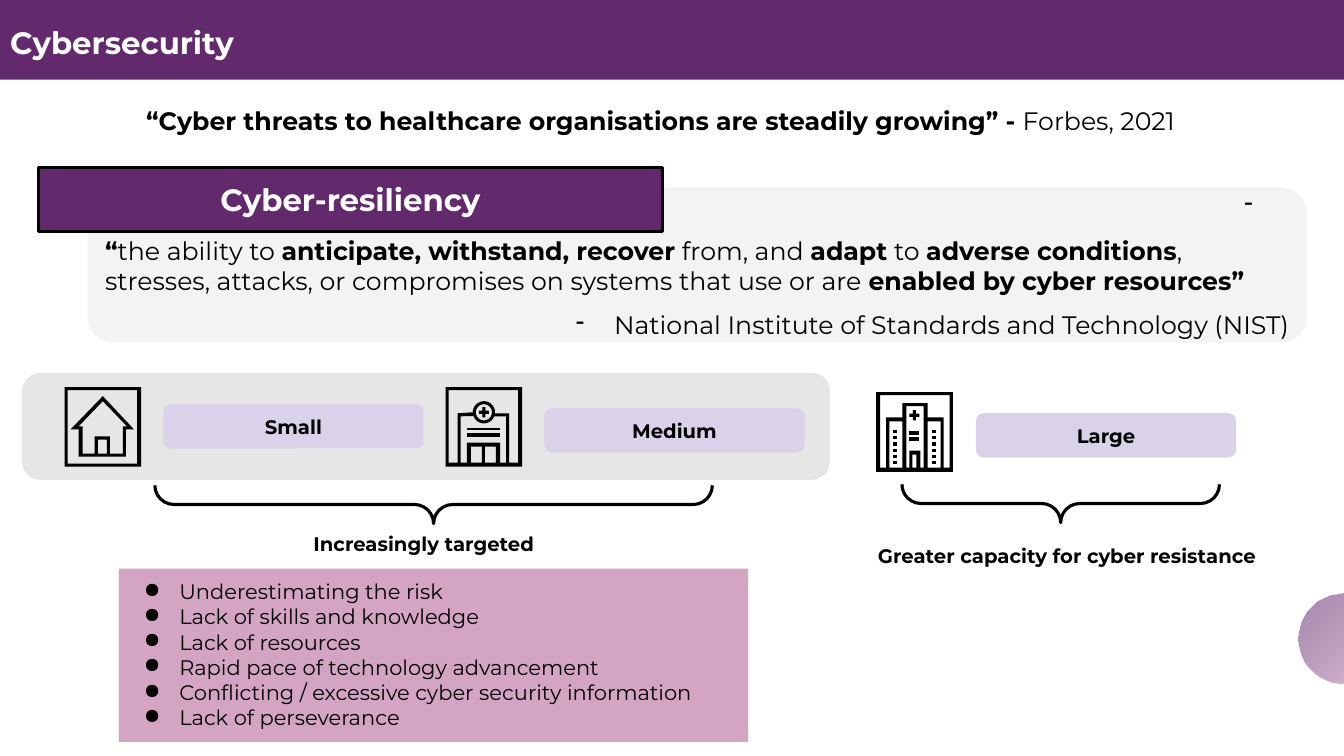
from math import cos, radians, sin

from lxml import etree
from pptx import Presentation
from pptx.dml.color import RGBColor
from pptx.enum.shapes import MSO_SHAPE
from pptx.enum.text import MSO_ANCHOR, PP_ALIGN
from pptx.oxml import parse_xml
from pptx.oxml.ns import nsdecls, qn
from pptx.util import Inches, Pt

RECT, ROUND = MSO_SHAPE.RECTANGLE, MSO_SHAPE.ROUNDED_RECTANGLE
ELLIPSE, BRACE = MSO_SHAPE.OVAL, MSO_SHAPE.RIGHT_BRACE
TOP, MIDDLE = MSO_ANCHOR.TOP, MSO_ANCHOR.MIDDLE
LEFT, CENTER, RIGHT = PP_ALIGN.LEFT, PP_ALIGN.CENTER, PP_ALIGN.RIGHT

FONT = "Montserrat"
BLACK, WHITE, PURPLE, PINK, LILAC = "000000", "FFFFFF", "62296D", "D3A5C3", "D9D2E9"
FRAME_W, FRAME_H = 0.76, 0.79

RISKS = [
    "Underestimating the risk",
    "Lack of skills and knowledge",
    "Lack of resources",
    "Rapid pace of technology advancement",
    "Conflicting / excessive cyber security information",
    "Lack of perseverance",
]
DEFINITION = [
    ("“", True), ("the ability to ", False),
    ("anticipate, withstand, recover", True), (" from, and ", False),
    ("adapt", True), (" to ", False), ("adverse conditions", True),
    (", stresses, attacks, or compromises on systems that use or are ", False),
    ("enabled by cyber resources”", True),
]


def rgb(color):
    return RGBColor.from_string(color)


def add_bullet(p, char, hanging):
    pPr = p._p.get_or_add_pPr()
    pPr.set("marL", str(Inches(0.5)))
    pPr.set("indent", str(-Inches(hanging)))
    clr = etree.SubElement(pPr, qn("a:buClr"))
    etree.SubElement(clr, qn("a:srgbClr"), val=BLACK)
    etree.SubElement(pPr, qn("a:buChar"), char=char)


def add_runs(p, runs, size, color=BLACK):
    for text, bold in runs:
        r = p.add_run()
        r.text = text
        for name, value in {"name": FONT, "size": Pt(size), "bold": bold}.items():
            setattr(r.font, name, value)
        r.font.color.rgb = rgb(color)


def write(sp, paragraphs, size, color=BLACK, anchor=TOP, inset=0.1):
    tf = sp.text_frame
    settings = {"word_wrap": True, "vertical_anchor": anchor,
                "margin_left": Inches(0.1), "margin_right": Inches(0.1),
                "margin_top": Inches(inset), "margin_bottom": Inches(inset)}
    for name, value in settings.items():
        setattr(tf, name, value)
    for i, (runs, bullet, formats) in enumerate(paragraphs):
        p = tf.add_paragraph() if i else tf.paragraphs[0]
        if bullet:
            add_bullet(p, *bullet)
        for name, value in formats.items():
            setattr(p, name, value)
        add_runs(p, runs, size, color)


def add_box(s, kind, box, fill=None, line=None):
    sp = s.shapes.add_shape(kind, *map(Inches, box))
    sp.shadow.inherit = False
    if fill:
        sp.fill.solid()
        sp.fill.fore_color.rgb = rgb(fill)
    else:
        sp.fill.background()
    if line:
        sp.line.color.rgb = rgb(line)
        sp.line.width = Pt(2.25)
    else:
        sp.line.fill.background()
    return sp


def add_label(s, box, runs, size, **formats):
    sp = s.shapes.add_textbox(*map(Inches, box))
    write(sp, [(runs, None, formats)], size)


def add_size_label(s, left, top, text):
    sp = add_box(s, ROUND, (left, top, 2.58, 0.44), LILAC)
    write(sp, [([(text, True)], None, {"alignment": CENTER})], 14, anchor=MIDDLE)


def add_brace(s, left, top, height):
    sp = add_box(s, BRACE, (left, top, 0.38, height), line=BLACK)
    sp.adjustments[0] = 0.5
    sp.rotation = 90


def add_glow(s):
    sp = add_box(s, ELLIPSE, (12.88, 5.89, 0.89, 0.89), PINK)
    stops = "".join(
        f'<a:gs pos="{pos}"><a:srgbClr val="{color}"><a:alpha val="{alpha}"/></a:srgbClr></a:gs>'
        for pos, color, alpha in [(0, PINK, 71000), (100000, "5F2D6F", 56000)])
    gradient = parse_xml(
        f'<a:gradFill {nsdecls("a")}><a:gsLst>{stops}</a:gsLst><a:path path="circle">'
        '<a:fillToRect l="100000" t="100000"/></a:path></a:gradFill>')
    spPr = sp._element.spPr
    spPr.replace(spPr.find(qn("a:solidFill")), gradient)


def rect(x, y, w, h):
    return [(x, y), (x + w, y), (x + w, y + h), (x, y + h)]


def plus(x, y, size=0.1, bar=0.03):
    a, b = (size - bar) / 2, (size + bar) / 2
    return [(x + dx, y + dy) for dx, dy in [
        (a, 0), (b, 0), (b, a), (size, a), (size, b), (b, b),
        (b, size), (a, size), (a, b), (0, b), (0, a), (a, a)]]


def arc(radius, start, end):
    return [(0.38 + radius * cos(radians(d)), 0.25 + radius * sin(radians(d)))
            for d in range(start, end, -10)]


def add_outline(group, left, top, contours):
    builder = None
    for contour in contours:
        points = [(Inches(left + x), Inches(top + y)) for x, y in contour]
        if builder:
            builder.move_to(*points[0])
        else:
            builder = group.shapes.build_freeform(*points[0])
        builder.add_line_segments(points[1:], close=True)
    sp = builder.convert_to_shape()
    sp.shadow.inherit = False
    sp.fill.solid()
    sp.fill.fore_color.rgb = rgb(BLACK)
    sp.line.fill.background()


def add_icon(s, left, top, contours, details=()):
    group = s.shapes.add_group_shape()
    add_outline(group, left, top, [rect(0, 0, FRAME_W, FRAME_H), *contours])
    for detail in details:
        add_outline(group, left, top, [detail])


def add_house(s, left, top):
    add_icon(s, left, top, [
        rect(0.03, 0.03, 0.69, 0.73), rect(0.33, 0.52, 0.09, 0.14),
        [(0.14, 0.69), (0.61, 0.69), (0.61, 0.42), (0.69, 0.42),
         (0.38, 0.09), (0.06, 0.42), (0.14, 0.42)],
        [(0.14, 0.39), (0.38, 0.14), (0.62, 0.39), (0.58, 0.39), (0.58, 0.66), (0.45, 0.66),
         (0.45, 0.49), (0.3, 0.49), (0.3, 0.66), (0.18, 0.66), (0.18, 0.39)]])


def add_clinic(s, left, top):
    surround = [
        (0.72, 0.75), (0.63, 0.75), (0.63, 0.26), (0.49, 0.26), (0.48, 0.29), (0.6, 0.29),
        (0.6, 0.75), (0.54, 0.75), (0.54, 0.55), (0.21, 0.55), (0.21, 0.75), (0.15, 0.75),
        (0.15, 0.29), *arc(0.11, 160, 10), *arc(0.11, 0, -190),
        (0.12, 0.26), (0.12, 0.75), (0.03, 0.75), (0.03, 0.03), (0.72, 0.03)]
    doors = [rect(x, 0.59, 0.11, 0.16) for x in (0.25, 0.39)]
    add_icon(s, left, top, [surround, *doors, arc(0.08, 360, 0)],
             [rect(0.21, 0.41, 0.33, 0.02), rect(0.21, 0.46, 0.33, 0.04), plus(0.33, 0.2)])


def add_hospital(s, left, top):
    surround = [
        (0.73, 0.75), (0.67, 0.75), (0.67, 0.25), (0.51, 0.25), (0.51, 0.11), (0.26, 0.11),
        (0.26, 0.25), (0.1, 0.25), (0.1, 0.75), (0.04, 0.75), (0.04, 0.03), (0.73, 0.03)]
    tower = [(0.47, 0.14), (0.47, 0.75), (0.44, 0.75), (0.44, 0.58),
             (0.33, 0.58), (0.33, 0.75), (0.3, 0.75), (0.3, 0.14)]
    wings = [rect(x, 0.29, 0.13, 0.46) for x in (0.13, 0.51)]
    windows = [rect(x, 0.38 + 0.06 * row, 0.04, 0.03) for x in (0.17, 0.55) for row in range(6)]
    signs = [rect(0.33, y, 0.1, 0.04) for y in (0.39, 0.45)]
    add_icon(s, left, top, [surround, tower, *wings, rect(0.36, 0.62, 0.04, 0.13)],
             [*signs, plus(0.33, 0.18), *windows])


def add_title(s, text):
    sp = s.shapes.title
    box = {"left": 0, "top": 0, "width": 13.33, "height": 0.79}
    for name, value in box.items():
        setattr(sp, name, Inches(value))
    sp.fill.solid()
    sp.fill.fore_color.rgb = rgb(PURPLE)
    write(sp, [([(text, True)], None, {"alignment": LEFT, "line_spacing": 1.15})],
          22, WHITE, MIDDLE, 0.05)


def add_definition(s):
    sp = add_box(s, ROUND, (0.87, 1.86, 12.09, 1.54), "F3F3F3")
    dash, gap = ("-", 0.38), Pt(10)
    source = [("National Institute of Standards and Technology (NIST)", False)]
    write(sp, [
        ([(" ", False)], dash, {"alignment": RIGHT}),
        (DEFINITION, None, {"alignment": LEFT, "space_before": gap}),
        (source, dash, {"alignment": RIGHT, "space_before": gap, "space_after": gap}),
    ], 18, anchor=MIDDLE)
    sp = add_box(s, RECT, (0.38, 1.66, 6.19, 0.64), PURPLE, BLACK)
    write(sp, [([("Cyber-resiliency", True)], None, {"alignment": CENTER})], 22, WHITE, MIDDLE)


def main():
    prs = Presentation()
    prs.slide_width, prs.slide_height = Inches(13.33), Inches(7.5)
    s = prs.slides.add_slide(prs.slide_layouts[5])
    add_title(s, "Cybersecurity")
    add_glow(s)
    add_label(s, (1.35, 0.94, 10.62, 0.5), [
        ("“Cyber threats to healthcare organisations are steadily growing” - ", True),
        ("Forbes, 2021", False)], 18, space_after=Pt(10))
    add_definition(s)

    add_box(s, ROUND, (0.22, 3.7, 8.01, 1.06), "E7E6E6")
    add_house(s, 0.64, 3.84)
    add_size_label(s, 1.62, 4.01, "Small")
    add_clinic(s, 4.42, 3.84)
    add_size_label(s, 5.4, 4.05, "Medium")
    add_hospital(s, 8.69, 3.89)
    add_size_label(s, 9.68, 4.1, "Large")

    add_brace(s, 4.11, 2.24, 5.53)
    add_label(s, (3.01, 5.18, 2.58, 0.44), [("Increasingly targeted", True)], 14)
    add_brace(s, 10.33, 3.42, 3.15)
    add_label(s, (8.61, 5.3, 4.13, 0.44), [("Greater capacity for cyber resistance", True)], 14)
    sp = add_box(s, RECT, (1.18, 5.64, 6.24, 1.72), PINK)
    write(sp, [([(risk, False)], ("●", 0.35), {"alignment": LEFT}) for risk in RISKS], 15)
    prs.save("out.pptx")


if __name__ == "__main__":
    main()
